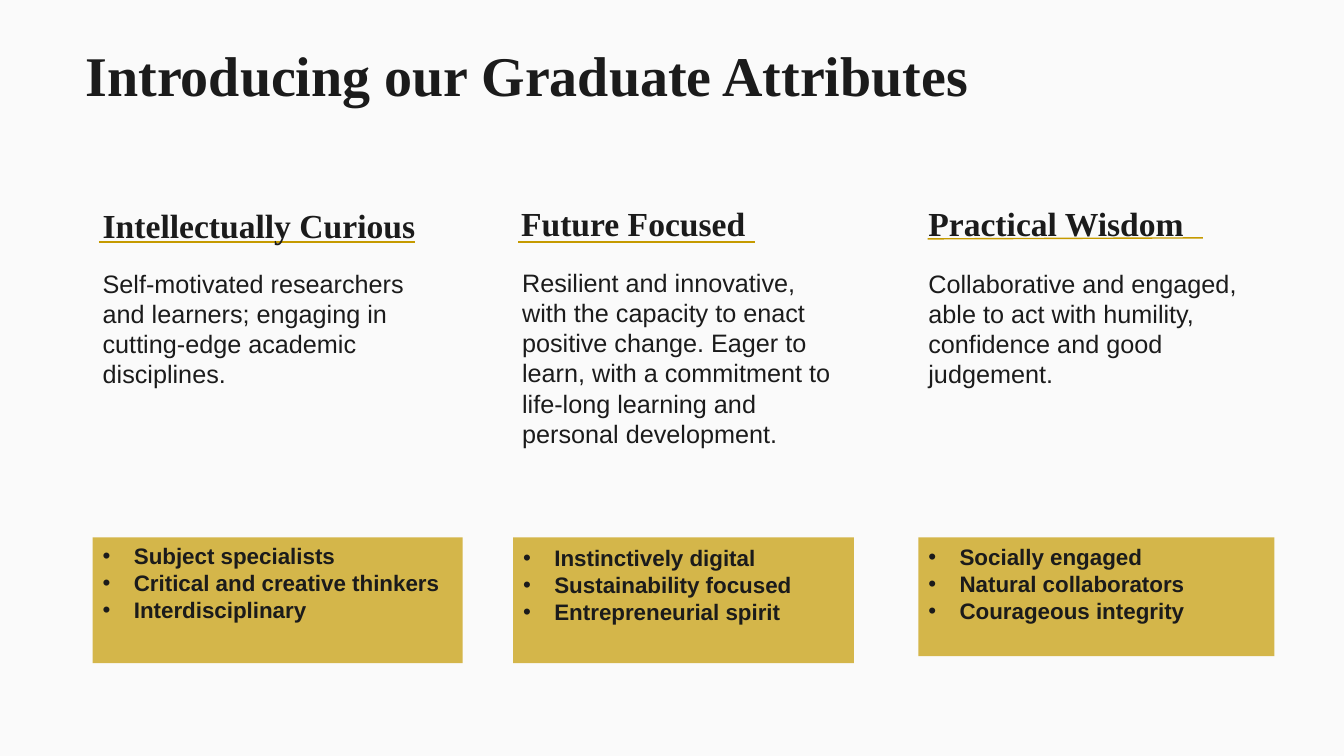
from lxml.etree import SubElement
from pptx import Presentation
from pptx.dml.color import RGBColor
from pptx.enum.shapes import MSO_CONNECTOR as Connector, MSO_SHAPE as Shape
from pptx.enum.text import MSO_ANCHOR as Anchor, PP_ALIGN as Align
from pptx.oxml.ns import qn
from pptx.util import Inches, Pt

PAPER = RGBColor(0xFA, 0xFA, 0xFA)
INK = RGBColor(0x1B, 0x1B, 0x1B)
GOLD = RGBColor(0xC5, 0x9A, 0x00)
SERIF = "Times New Roman"
SANS = "Arial"

COLUMNS = [
    {
        "heading": ("Intellectually Curious", 0.92, 1.98, 3.67),
        "rule": (0.98, 2.4, 4.12, 2.4),
        "body": ("Self-motivated researchers and learners; engaging in "
                 "cutting-edge academic disciplines.", 0.92, 2.61, 3.26, 1.62),
        "panel": (0.92, 3.67, 1.25, 0.05),
        "traits": ["Subject specialists", "Critical and creative thinkers",
                   "Interdisciplinary"],
    },
    {
        "heading": ("Future Focused", 5.07, 1.96, 3.67),
        "rule": (5.14, 2.4, 7.49, 2.4),
        "body": ("Resilient and innovative, with the capacity to enact positive change. "
                 "Eager to learn, with a commitment to life-long learning and "
                 "personal development.", 5.08, 2.6, 3.39, 2.52),
        "panel": (5.09, 3.38, 1.25, 0.07),
        "traits": ["Instinctively digital", "Sustainability focused",
                   "Entrepreneurial spirit"],
    },
    {
        "heading": ("Practical Wisdom", 9.11, 1.96, 2.83),
        "rule": (9.2, 2.37, 11.93, 2.36),
        "body": ("Collaborative and engaged, able to act with humility, "
                 "confidence and good judgement.", 9.11, 2.61, 3.26, 1.62),
        "panel": (9.11, 3.53, 1.18, 0.06),
        "traits": ["Socially engaged", "Natural collaborators",
                   "Courageous integrity"],
    },
]


class AttributesSlide:
    def __init__(self, deck):
        self.page = deck.slides.add_slide(deck.slide_layouts[6])
        self.page.background.fill.solid()
        self.page.background.fill.fore_color.rgb = PAPER

    def style(self, para, size, name, bold):
        para.font.size = Pt(size)
        para.font.name = name
        para.font.bold = bold
        para.font.color.rgb = INK

    def text(self, words, left, top, width, height, size, name=SANS, bold=False,
             anchor=Anchor.TOP, spacing=None):
        box = self.page.shapes.add_textbox(
            Inches(left), Inches(top), Inches(width), Inches(height))
        frame = box.text_frame
        frame.word_wrap = True
        frame.vertical_anchor = anchor
        para = frame.paragraphs[0]
        para.text = words
        para.line_spacing = spacing
        self.style(para, size, name, bold)

    def rule(self, left, top, right, bottom):
        line = self.page.shapes.add_connector(
            Connector.STRAIGHT, Inches(left), Inches(top), Inches(right), Inches(bottom))
        line.line.color.rgb = GOLD
        line.line.width = Pt(1)
        SubElement(line._element.spPr, qn("a:effectLst"))

    def panel(self, traits, left, width, height, inset):
        panel = self.page.shapes.add_shape(
            Shape.RECTANGLE, Inches(left), Inches(5.33), Inches(width), Inches(height))
        panel.shadow.inherit = False
        panel.line.fill.background()
        panel.fill.solid()
        panel.fill.fore_color.rgb = GOLD
        color = panel._element.spPr.find(qn("a:solidFill"))[0]
        SubElement(color, qn("a:alpha"), val="70000")
        frame = panel.text_frame
        frame.word_wrap = True
        frame.vertical_anchor = Anchor.TOP
        frame.margin_top = Inches(inset)
        for index, trait in enumerate(traits):
            para = frame.paragraphs[0] if index == 0 else frame.add_paragraph()
            para.text = trait
            para.alignment = Align.LEFT
            self.bullet(para)
            self.style(para, 16, SANS, True)

    def bullet(self, para):
        settings = para._p.get_or_add_pPr()
        settings.set("marL", str(Inches(0.31)))
        settings.set("indent", str(-Inches(0.31)))
        SubElement(settings, qn("a:buFont"), typeface=SANS)
        SubElement(settings, qn("a:buChar"), char="•")


def main():
    deck = Presentation()
    deck.slide_width = Inches(13.33)
    deck.slide_height = Inches(7.5)
    slide = AttributesSlide(deck)
    slide.text("Introducing our Graduate Attributes", 0.75, 0.52, 9.99, 0.52,
               40, SERIF, True, Anchor.MIDDLE, 0.9)
    for column in COLUMNS:
        slide.rule(*column["rule"])
        slide.text(*column["body"], 18)
        slide.text(*column["heading"], 0.81, 24, SERIF, True)
        slide.panel(column["traits"], *column["panel"])
    deck.save("out.pptx")


if __name__ == "__main__":
    main()
